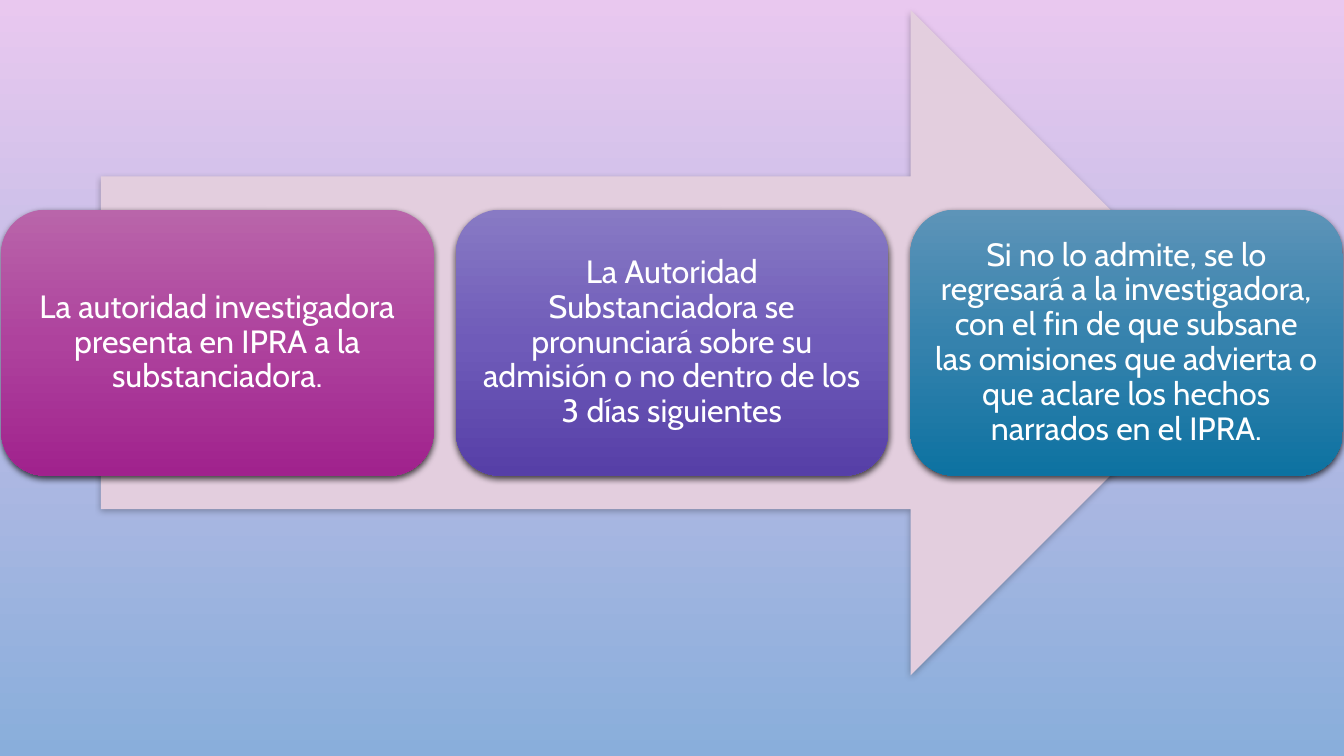
import copy

import pptx
import pptx.dml.color
import pptx.enum.shapes
import pptx.enum.text
import pptx.oxml
import pptx.oxml.ns
import pptx.util
from lxml import etree

Pt = pptx.util.Pt
RGB = pptx.dml.color.RGBColor
SHAPE = pptx.enum.shapes.MSO_SHAPE
qn = pptx.oxml.ns.qn

STEPS = [
    ("La autoridad investigadora presenta en IPRA a la substanciadora.",
     [RGB(0xB9, 0x65, 0xAA), RGB(0xAE, 0x42, 0x9D), RGB(0xA0, 0x22, 0x8D)]),
    ("La Autoridad Substanciadora se pronunciará sobre su admisión o no "
     "dentro de los 3 días siguientes",
     [RGB(0x88, 0x7A, 0xC4), RGB(0x6F, 0x5B, 0xB9), RGB(0x56, 0x3F, 0xA7)]),
    ("Si no lo admite, se lo regresará a la investigadora, con el fin de que "
     "subsane las omisiones que advierta o que aclare los hechos narrados en el IPRA.",
     [RGB(0x5D, 0x94, 0xB8), RGB(0x35, 0x82, 0xAD), RGB(0x0D, 0x72, 0xA1)]),
]
BACKGROUND = [RGB(0xE9, 0xC8, 0xEF), RGB(0x89, 0xAE, 0xDB)]
ARROW = RGB(0xE3, 0xCE, 0xDE)
WHITE = RGB(0xFF, 0xFF, 0xFF)

SLIDE_W, SLIDE_H = 960, 540
ARROW_X, ARROW_Y, ARROW_W, ARROW_H = 72, 7.2, 816, 475.2
CARD_W, CARD_H, GAP = 308.9, 190.1, 15.8
CARD_X = (SLIDE_W - len(STEPS) * CARD_W - (len(STEPS) - 1) * GAP) / 2
CARD_Y = ARROW_Y + (ARROW_H - CARD_H) / 2


def set_gradient(fill, element, colors):
    fill.gradient()
    fill.gradient_angle = 270
    stops = element.find(".//" + qn("a:gsLst"))
    while len(stops) < len(colors):
        stops.append(copy.deepcopy(stops[-1]))
    for i, (stop, color) in enumerate(zip(fill.gradient_stops, colors)):
        stop.position = i / (len(colors) - 1)
        stop.color.rgb = color


def add_block(slide, kind, x, y, w, h, opacity, blur):
    sp = slide.shapes.add_shape(kind, Pt(x), Pt(y), Pt(w), Pt(h))
    sp.line.fill.background()
    sp.shadow.inherit = False
    effects = sp.element.spPr.find(qn("a:effectLst"))
    shadow = etree.SubElement(effects, qn("a:outerShdw"), blurRad=str(Pt(blur)),
                              dist=str(Pt(2)), dir="5400000", rotWithShape="0")
    color = etree.SubElement(shadow, qn("a:srgbClr"), val="000000")
    etree.SubElement(color, qn("a:alpha"), val=str(opacity * 1000))
    return sp


def add_card(slide, x, text, colors):
    sp = add_block(slide, SHAPE.ROUNDED_RECTANGLE, x, CARD_Y, CARD_W, CARD_H, 69, 5)
    set_gradient(sp.fill, sp.element, colors)
    tf = sp.text_frame
    tf.word_wrap = True
    tf.vertical_anchor = pptx.enum.text.MSO_ANCHOR.MIDDLE
    tf.margin_left = tf.margin_right = tf.margin_top = tf.margin_bottom = Pt(7.2)
    p = tf.paragraphs[0]
    p.text = text
    p.alignment = pptx.enum.text.PP_ALIGN.CENTER
    p.line_spacing = 0.9
    p.font.name = "Cabin"
    p.font.size = Pt(23)
    p.font.color.rgb = WHITE


def main():
    prs = pptx.Presentation()
    prs.slide_width, prs.slide_height = Pt(SLIDE_W), Pt(SLIDE_H)
    slide = prs.slides.add_slide(prs.slide_layouts[6])
    set_gradient(slide.background.fill, slide.element, BACKGROUND)

    arrow = add_block(slide, SHAPE.RIGHT_ARROW, ARROW_X, ARROW_Y, ARROW_W, ARROW_H, 28, 4)
    arrow.fill.solid()
    arrow.fill.fore_color.rgb = ARROW

    for i, (text, colors) in enumerate(STEPS):
        add_card(slide, CARD_X + i * (CARD_W + GAP), text, colors)

    prs.save("out.pptx")


if __name__ == "__main__":
    main()
